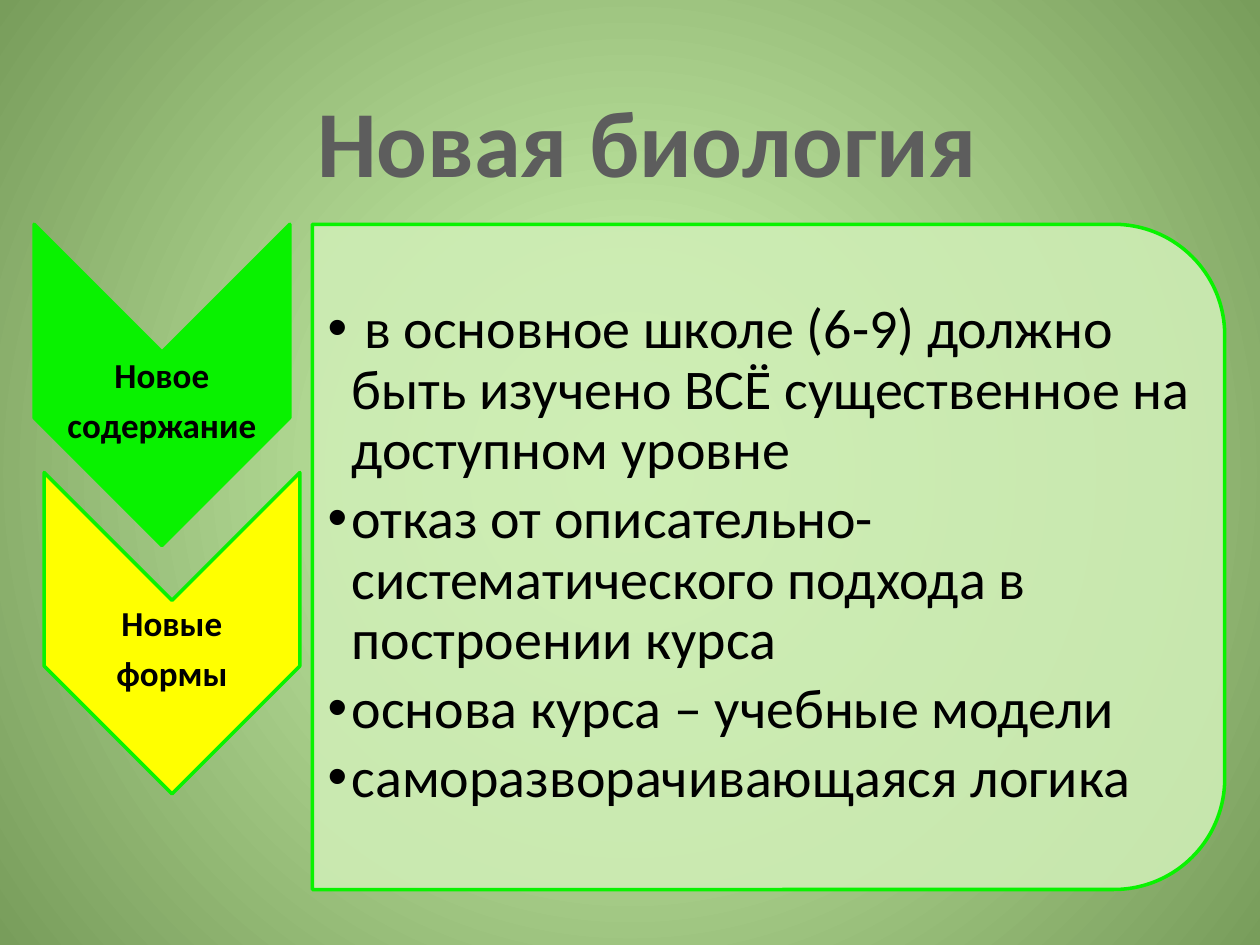
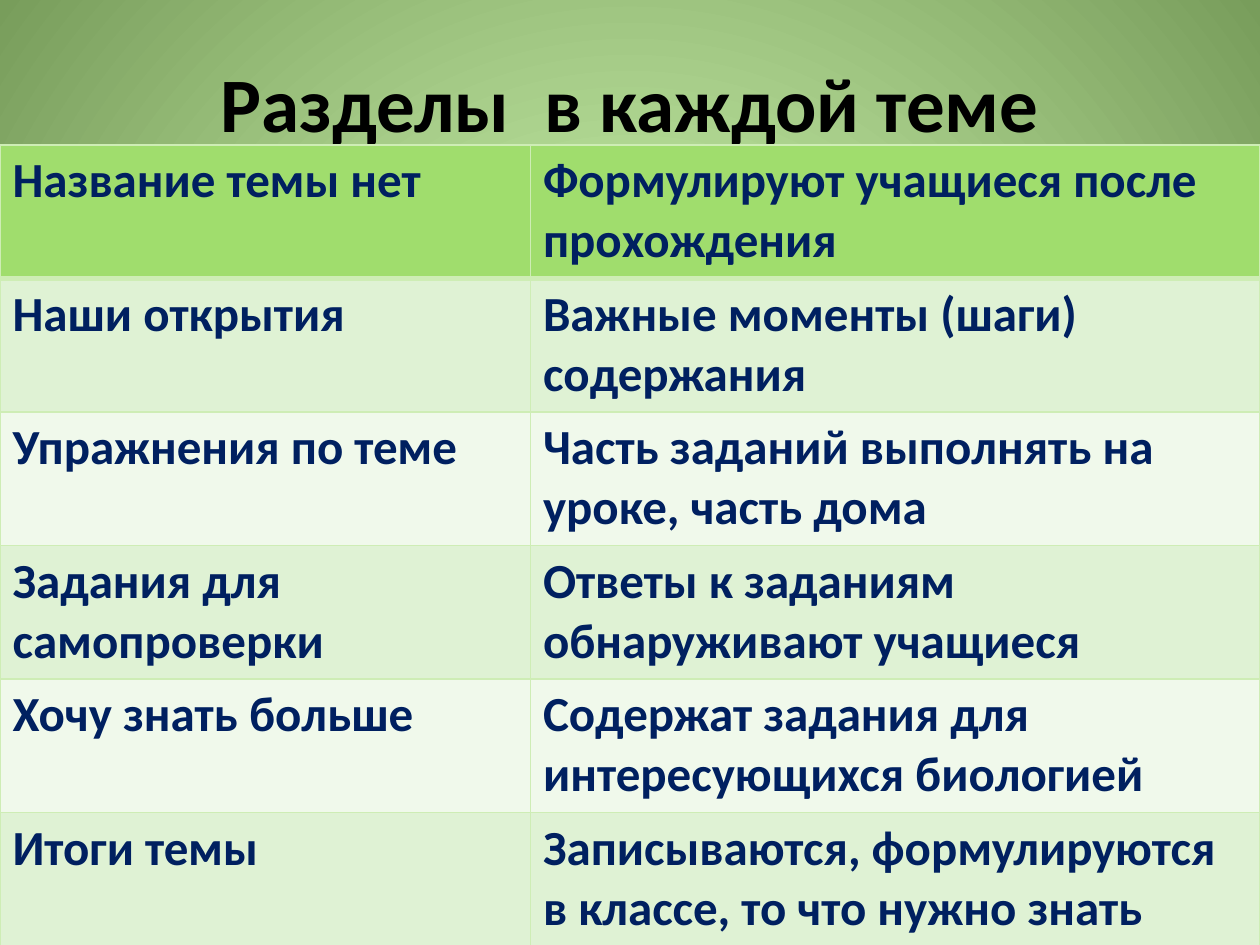
from dataclasses import dataclass

from lxml import etree
from pptx import Presentation
from pptx.dml import color
from pptx.enum import shapes, text
from pptx.oxml import ns
from pptx.util import Inches, Pt


@dataclass(frozen=True)
class Theme:
    font: str = "Calibri"
    glow: str = "D7FFB8"
    edge: str = "789D5B"
    green: str = "09F200"
    yellow: str = "FFFF00"
    pale: str = "CEEDB5"
    head: str = "A0DD6D"
    bands: tuple = ("DFF2D4", "F0F9EB")
    ink: str = "000000"
    gray: str = "5D5D5D"
    navy: str = "002060"
    hero: int = 54
    title: int = 44
    body: int = 32
    cell: int = 28
    label: int = 20


THEME = Theme()
GOALS = [
    " в основное школе (6-9) должно быть изучено ВСЁ существенное на доступном уровне",
    "отказ от описательно-систематического подхода в построении курса",
    "основа курса – учебные модели",
    "саморазворачивающаяся логика",
]
PARTS = [
    ("Название темы нет", "Формулируют учащиеся после прохождения"),
    ("Наши открытия", "Важные моменты (шаги) содержания"),
    ("Упражнения по теме", "Часть заданий выполнять на уроке, часть дома"),
    ("Задания для самопроверки", "Ответы к заданиям обнаруживают учащиеся"),
    ("Хочу знать больше", "Содержат задания для интересующихся биологией"),
    ("Итоги темы", "Записываются, формулируются в классе, то что нужно знать"),
]


def rgb(code):
    return color.RGBColor.from_string(code)


def apply(item, values):
    for name, value in values.items():
        setattr(item, name, value)


def add(node, tag, **attrs):
    return etree.SubElement(node, ns.qn(tag), attrs)


def paint(fill, code):
    fill.solid()
    fill.fore_color.rgb = rgb(code)


def write(frame, lines, size, code, bold=True, **layout):
    for count, line in enumerate(lines):
        para = frame.add_paragraph() if count else frame.paragraphs[0]
        apply(para, layout)
        run = para.add_run()
        run.text = line
        apply(run.font, {"name": THEME.font, "size": Pt(size), "bold": bold})
        run.font.color.rgb = rgb(code)


def label(slide, box, lines, size, code, frame=None, **layout):
    area = slide.shapes.add_textbox(*map(Inches, box)).text_frame
    base = {"word_wrap": True, "vertical_anchor": text.MSO_ANCHOR.MIDDLE}
    apply(area, {**base, **(frame or {})})
    write(area, lines, size, code, **layout)
    return area


def margins(left=0.01, bottom=0.01):
    return {
        "margin_left": Inches(left),
        "margin_top": Inches(0.01),
        "margin_right": Inches(0.01),
        "margin_bottom": Inches(bottom),
    }


def turned(slide, kind, box, code):
    left, top, width, height = box
    shift = (width - height) / 2
    frame = (left + shift, top - shift, height, width)
    shape = slide.shapes.add_shape(kind, *map(Inches, frame))
    shape.rotation = 90
    shape.shadow.inherit = False
    paint(shape.fill, code)
    apply(shape.line, {"width": Pt(2)})
    shape.line.color.rgb = rgb(THEME.green)
    return shape


def arrow(slide, box, lines, code):
    left, top, width, height = box
    turned(slide, shapes.MSO_SHAPE.CHEVRON, box, code)
    label(slide, (left, top + 0.27, width, 2.28), lines, THEME.label, THEME.ink,
          margins(), alignment=text.PP_ALIGN.CENTER,
          line_spacing=0.9, space_after=Pt(7))


def panel(slide, box, lines):
    left, top, width, height = box
    shape = turned(slide, shapes.MSO_SHAPE.ROUND_2_SAME_RECTANGLE, box, THEME.pale)
    tint = shape.element.spPr.find(ns.qn("a:solidFill") + "/" + ns.qn("a:srgbClr"))
    add(tint, "a:alpha", val="90000")
    area = label(slide, (left, top + 0.55, width - 0.05, 4.42), lines, THEME.body,
                 THEME.ink, margins(0.12, 0.28), bold=False, line_spacing=0.9,
                 space_after=Pt(4.8))
    for para in area.paragraphs:
        props = para._p.get_or_add_pPr()
        indent = Inches(0.19)
        props.set("marL", str(indent))
        props.set("indent", str(-indent))
        add(props, "a:buFont", typeface="Arial")
        add(props, "a:buChar", char="•")


def border(cell, sides):
    props = cell._tc.get_or_add_tcPr()
    for side, width in sides.items():
        line = add(props, f"a:ln{side}", w=str(Pt(width)))
        add(add(line, "a:solidFill"), "a:srgbClr", val=THEME.pale)


def grid(slide, box, rows, split):
    left, top, width, height = box
    table = slide.shapes.add_table(len(rows), 2, *map(Inches, box)).table
    apply(table, {"first_row": False, "horz_banding": False})
    for column, share in zip(table.columns, (split, width - split)):
        column.width = Inches(share)
    for index, row in enumerate(rows):
        table.rows[index].height = Inches(height / len(rows))
        tone = THEME.bands[(index - 1) % 2] if index else THEME.head
        sides = {"L": 1, "R": 1, "T": 3 if index == 1 else 1,
                 "B": 1 if index else 3}
        for place, words in enumerate(row):
            cell = table.cell(index, place)
            border(cell, sides)
            paint(cell.fill, tone)
            write(cell.text_frame, [words], THEME.cell, THEME.navy)


def page(deck):
    slide = deck.slides.add_slide(deck.slide_layouts[6])
    fill = slide.background.fill
    fill.gradient()
    for stop, code in zip(fill.gradient_stops, (THEME.glow, THEME.edge)):
        stop.color.rgb = rgb(code)
    grade = next(slide.element.iter(ns.qn("a:gradFill")))
    grade.remove(grade.find(ns.qn("a:lin")))
    focus = add(grade, "a:path", path="circle")
    add(focus, "a:fillToRect", **dict.fromkeys("ltrb", "50000"))
    return slide


def course(deck):
    slide = page(deck)
    arrow(slide, (0.27, 1.78, 2.03, 2.55), ["Новое", "содержание"], THEME.green)
    panel(slide, (2.48, 1.78, 7.24, 5.28), GOALS)
    label(slide, (2.4, 0.6, 5.47, 1.01), ["Новая биология"], THEME.hero, THEME.gray,
          {"word_wrap": False}, alignment=text.PP_ALIGN.CENTER)
    arrow(slide, (0.35, 3.75, 2.03, 2.55), ["Новые", "формы"], THEME.yellow)


def topics(deck):
    slide = page(deck)
    label(slide, (0.5, 0.3, 9, 1.01), ["Разделы  в каждой теме"], THEME.title,
          THEME.ink, alignment=text.PP_ALIGN.CENTER)
    grid(slide, (0, 1.15, 10, 6.36), PARTS, 4.21)


def main():
    deck = Presentation()
    apply(deck, {"slide_width": Inches(10), "slide_height": Inches(7.5)})
    course(deck)
    topics(deck)
    deck.save("out.pptx")


if __name__ == "__main__":
    main()
